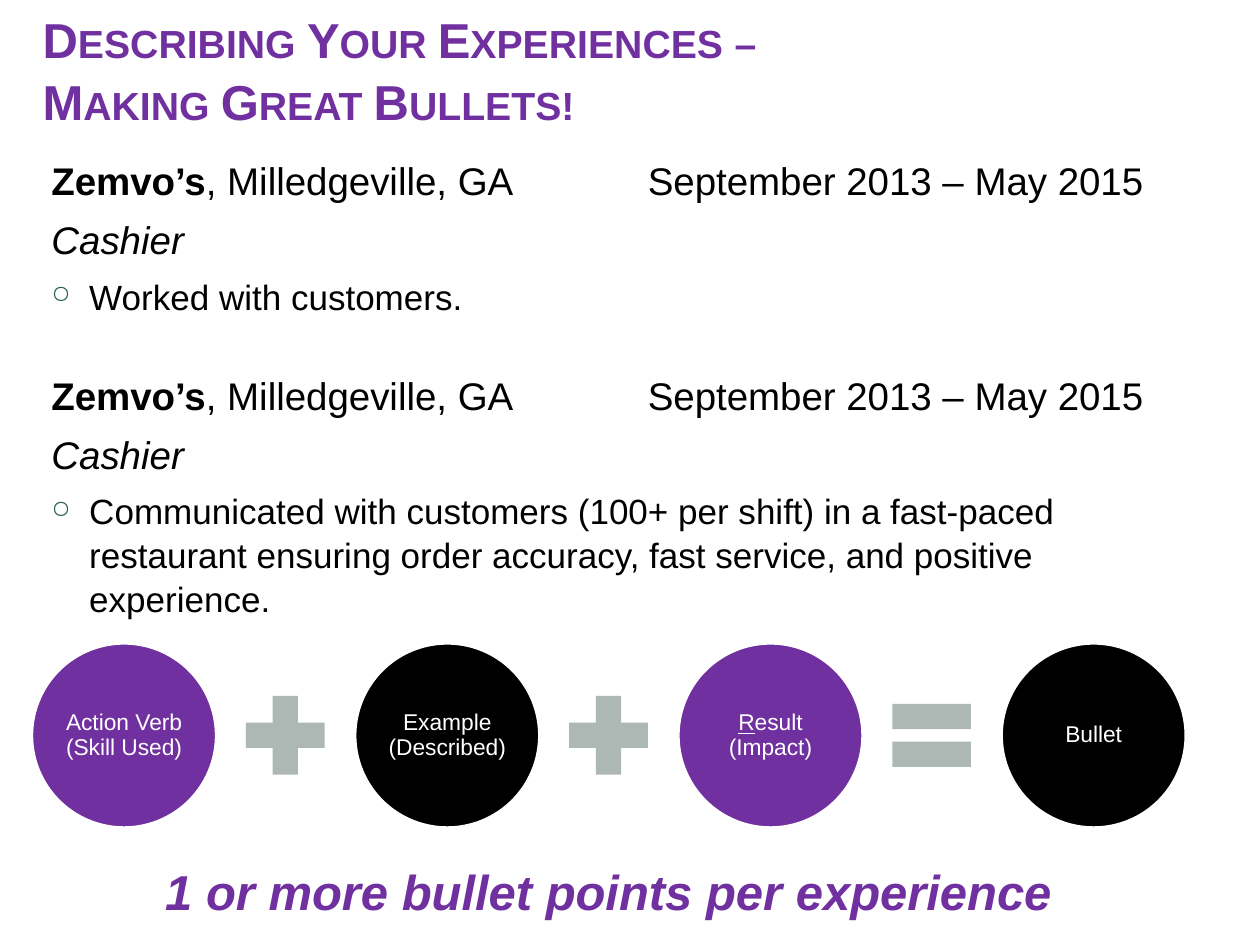
"""Builds a slide on writing strong résumé bullets from work experience."""
from lxml import etree
from pptx import Presentation
from pptx.dml.color import RGBColor
from pptx.enum.shapes import MSO_SHAPE
from pptx.enum.text import MSO_ANCHOR, PP_ALIGN
from pptx.oxml.ns import qn
from pptx.util import Pt

PURPLE = RGBColor(0x70, 0x30, 0xA0)
BLACK = RGBColor(0, 0, 0)
WHITE = RGBColor(0xFF, 0xFF, 0xFF)
GREY = RGBColor(0xAD, 0xB7, 0xB3)
BULLET_GREEN = "296050"
OVAL, PLUS, EQUAL = MSO_SHAPE.OVAL, MSO_SHAPE.MATH_PLUS, MSO_SHAPE.MATH_EQUAL
MIDDLE, BOTTOM = MSO_ANCHOR.MIDDLE, MSO_ANCHOR.BOTTOM
CENTER = PP_ALIGN.CENTER


def set_font(paragraph, size, color, bold=False, italic=False):
    font = paragraph.font
    font.name, font.size, font.bold, font.italic = "Arial", Pt(size), bold, italic
    font.color.rgb = color


def add_ppr_child(parent, tag, **attributes):
    return etree.SubElement(parent, qn(tag), attributes)


prs = Presentation()
prs.slide_width, prs.slide_height = Pt(720), Pt(540)
slide = prs.slides.add_slide(prs.slide_layouts[6])
shapes = slide.shapes

title = shapes.add_textbox(Pt(17.3), Pt(-12.2), Pt(509), Pt(90)).text_frame
title.word_wrap = True
title.vertical_anchor = BOTTOM
heading = title.paragraphs[0]
heading.text = "Describing Your Experiences –\vMaking Great Bullets!"
heading.line_spacing = 1.05
set_font(heading, 28, PURPLE, bold=True)
for run in heading.runs:
    run.font.bold = True
    run._r.get_or_add_rPr().set("cap", "small")

body = shapes.add_textbox(Pt(22.3), Pt(85), Pt(666), Pt(384)).text_frame
body.word_wrap = True
achievements = [
    "Worked with customers.",
    "Communicated with customers (100+ per shift) in a fast-paced restaurant "
    "ensuring order accuracy, fast service, and positive experience.",
]
for index, achievement in enumerate(achievements):
    employer = body.add_paragraph() if index else body.paragraphs[0]
    employer.space_before = Pt(30 * index)
    tabs = add_ppr_child(employer._p.get_or_add_pPr(), "a:tabLst")
    add_ppr_child(tabs, "a:tab", pos=str(Pt(340.8)), algn="l")
    set_font(employer, 22, BLACK)
    name = employer.add_run()
    name.text = "Zemvo’s"
    name.font.bold = True
    employer.add_run().text = ", Milledgeville, GA\tSeptember 2013 – May 2015"

    position = body.add_paragraph()
    position.text = "Cashier"
    position.space_before = Pt(6)
    set_font(position, 22, BLACK, italic=True)

    bullet = body.add_paragraph()
    bullet.text = achievement
    bullet.space_before = Pt(6)
    properties = bullet._p.get_or_add_pPr()
    properties.set("marL", str(Pt(21.6)))
    properties.set("indent", str(-Pt(21.6)))
    bullet_color = add_ppr_child(properties, "a:buClr")
    add_ppr_child(bullet_color, "a:srgbClr", val=BULLET_GREEN)
    add_ppr_child(properties, "a:buSzPct", val="70000")
    add_ppr_child(properties, "a:buChar", char="○")
    set_font(bullet, 20, BLACK)
for paragraph in body.paragraphs:
    paragraph.line_spacing = 1.05

PITCH = 184.7
steps = [
    (PURPLE, ["Action Verb (Skill Used)"], PLUS),
    (BLACK, ["Example (Described)"], PLUS),
    (PURPLE, ["R", "esult (Impact)"], EQUAL),
    (BLACK, ["Bullet"], None),
]
for index, (color, label_parts, operator) in enumerate(steps):
    left = 18 + index * PITCH
    circle = shapes.add_shape(OVAL, Pt(left), Pt(367.4), Pt(105.8), Pt(105.8))
    circle.shadow.inherit = False
    circle.fill.solid()
    circle.fill.fore_color.rgb = color
    circle.line.color.rgb = WHITE
    circle.line.width = Pt(2)
    frame = circle.text_frame
    frame.word_wrap = True
    frame.vertical_anchor = MIDDLE
    frame.margin_left = frame.margin_right = Pt(1.3)
    frame.margin_top = frame.margin_bottom = Pt(1.3)
    label = frame.paragraphs[0]
    label.alignment = CENTER
    label.line_spacing = 0.9
    set_font(label, 13, WHITE)
    for part in label_parts:
        run = label.add_run()
        run.text = part
        if part == "R":
            run.font.underline = True
    if operator is not None:
        sign = shapes.add_shape(operator, Pt(left + 114.4), Pt(389.6), Pt(61.2), Pt(61.2))
        sign.shadow.inherit = False
        sign.fill.solid()
        sign.fill.fore_color.rgb = GREY
        sign.line.fill.background()

closing = shapes.add_textbox(Pt(84.2), Pt(489), Pt(527), Pt(41)).text_frame
closing.word_wrap = False
tagline = closing.paragraphs[0]
tagline.text = "1 or more bullet points per experience"
tagline.alignment = CENTER
set_font(tagline, 28, PURPLE, bold=True, italic=True)

prs.save("out.pptx")
